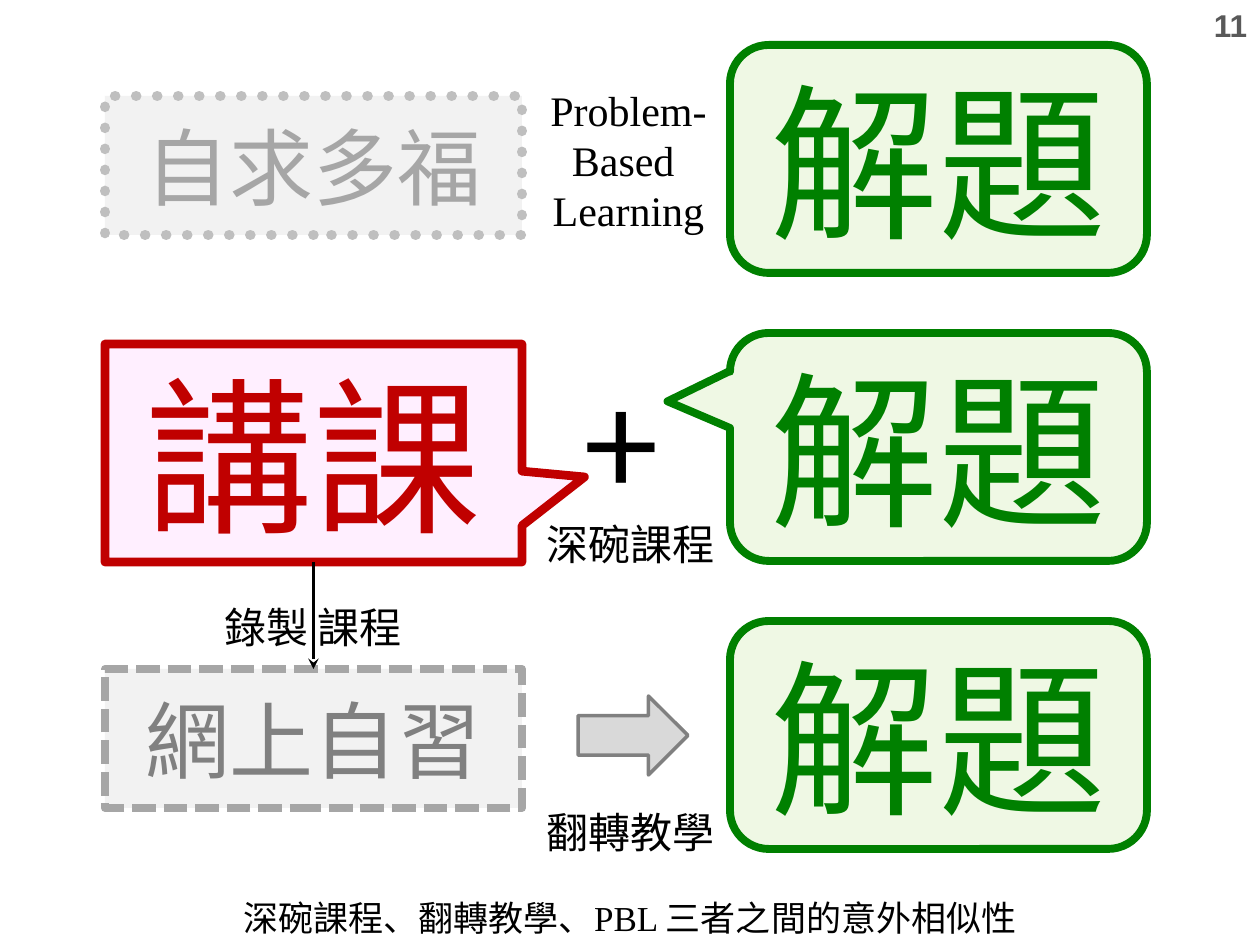
"""Builds the slide comparing three course formats built around problem solving."""
from dataclasses import dataclass
from typing import Optional

from lxml.etree import SubElement
from pptx import Presentation
from pptx.dml.color import RGBColor
from pptx.enum.dml import MSO_LINE_DASH_STYLE as Dash
from pptx.enum.shapes import MSO_CONNECTOR as Connector, MSO_SHAPE as Preset
from pptx.enum.text import MSO_ANCHOR as Anchor, MSO_AUTO_SIZE as AutoSize, PP_ALIGN as Align
from pptx.oxml.ns import qn
from pptx.util import Emu, Pt

PX_PER_INCH = 126
SLIDE_WIDTH, SLIDE_HEIGHT = 1260, 945

BLACK = RGBColor(0x00, 0x00, 0x00)
GREEN = RGBColor(0x00, 0x80, 0x00)
PALE_GREEN = RGBColor(0xEF, 0xF8, 0xE4)
RED = RGBColor(0xC0, 0x00, 0x00)
PALE_PINK = RGBColor(0xFF, 0xEF, 0xFF)
GRAY_95 = RGBColor(0xF2, 0xF2, 0xF2)
GRAY_85 = RGBColor(0xD9, 0xD9, 0xD9)
GRAY_75 = RGBColor(0xBF, 0xBF, 0xBF)
GRAY_65 = RGBColor(0xA6, 0xA6, 0xA6)
GRAY_50 = RGBColor(0x80, 0x80, 0x80)
GRAY_35 = RGBColor(0x59, 0x59, 0x59)

CJK_JP, CJK_SC = "Noto Sans CJK JP", "Noto Sans CJK SC"
SERIF, SANS = "Times New Roman", "Arial"

LEFT_COLUMN, RIGHT_COLUMN = 105, 730
FIRST_ROW, ROW_STEP = 45, 288
CARD_WIDTH, CARD_HEIGHT = 417, 228
STUDY_HEIGHT = 139


@dataclass(frozen=True)
class Box:
    left: int
    top: int
    width: int
    height: int

    def emu(self) -> tuple:
        return tuple(px(side) for side in (self.left, self.top, self.width, self.height))


@dataclass(frozen=True)
class TextStyle:
    size: int
    color: RGBColor = BLACK
    latin: str = CJK_SC
    east_asian: str = CJK_SC
    bold: bool = False
    align: Align = Align.CENTER


@dataclass(frozen=True)
class Card:
    box: Box
    preset: Preset
    fill: RGBColor
    line: RGBColor
    line_width: float
    text: str = ""
    style: Optional[TextStyle] = None
    dash: Optional[Dash] = None
    round_cap: bool = False
    adjustments: tuple = ()


@dataclass(frozen=True)
class Label:
    box: Box
    text: str
    style: TextStyle


def px(length: int) -> Emu:
    """Convert pixels to EMU."""
    return Emu(round(length * 914400 / PX_PER_INCH))


def write_text(frame, text: str, style: TextStyle) -> None:
    """Fill a text frame with one paragraph per line of text."""
    frame.text = text
    for paragraph in frame.paragraphs:
        paragraph.alignment = style.align
        font = paragraph.font
        font.size, font.bold, font.name = Pt(style.size), style.bold, style.latin
        font.color.rgb = style.color
        SubElement(font._element, qn("a:ea"), typeface=style.east_asian)


def add_card(slide, card: Card):
    """Draw a filled and outlined preset shape with optional text."""
    shape = slide.shapes.add_shape(card.preset, *card.box.emu())
    shape.shadow.inherit = False
    shape.fill.solid()
    shape.fill.fore_color.rgb = card.fill
    shape.line.color.rgb = card.line
    shape.line.width = Pt(card.line_width)
    if card.dash:
        shape.line.dash_style = card.dash
    if card.round_cap:
        shape.line._get_or_add_ln().set("cap", "rnd")
    for index, value in enumerate(card.adjustments):
        shape.adjustments[index] = value
    if card.style:
        shape.text_frame.vertical_anchor = Anchor.MIDDLE
        write_text(shape.text_frame, card.text, card.style)
    return shape


def add_label(slide, label: Label) -> None:
    """Draw an unwrapped text box."""
    frame = slide.shapes.add_textbox(*label.box.emu()).text_frame
    frame.word_wrap = False
    write_text(frame, label.text, label.style)


def add_arrow(slide, source, target) -> None:
    """Join the bottom of one shape to the top of another."""
    arrow = slide.shapes.add_connector(Connector.STRAIGHT, 0, 0, 0, 0)
    arrow.begin_connect(source, 2)
    arrow.end_connect(target, 0)
    arrow.line.color.rgb = BLACK
    arrow.line.width = Pt(2)
    SubElement(arrow.line._get_or_add_ln(), qn("a:tailEnd"), type="stealth")
    SubElement(arrow._element.spPr, qn("a:effectLst"))


def set_title(slide, text: str, box: Box, style: TextStyle) -> None:
    """Place and format the title placeholder."""
    title = slide.shapes.title
    title.left, title.top, title.width, title.height = box.emu()
    title.text_frame.auto_size = AutoSize.NONE
    write_text(title.text_frame, text, style)


def solving_card(row: int, tip: tuple) -> Card:
    """Describe the problem-solving callout of a row."""
    box = Box(RIGHT_COLUMN, FIRST_ROW + row * ROW_STEP, CARD_WIDTH, CARD_HEIGHT)
    return Card(box, Preset.ROUNDED_RECTANGULAR_CALLOUT, PALE_GREEN, GREEN, 4.5, "解題",
                TextStyle(96, GREEN, CJK_JP, CJK_JP), adjustments=(*tip, 0.17))


def study_card(top: int, text: str, color: RGBColor, line: RGBColor, width: float,
               dash: Dash, round_cap: bool = False) -> Card:
    """Describe a self-study box in the left column."""
    return Card(Box(LEFT_COLUMN, top, CARD_WIDTH, STUDY_HEIGHT), Preset.RECTANGLE, GRAY_95,
                line, width, text, TextStyle(48, color, CJK_JP, CJK_JP), dash, round_cap)


HIDDEN_TIP, LEFT_TIP = (-0.5, -0.19), (-0.65, -0.2)
SOLVING_CARDS = [solving_card(row, tip)
                 for row, tip in enumerate((HIDDEN_TIP, LEFT_TIP, HIDDEN_TIP))]
SELF_RELIANCE = study_card(96, "自求多福", GRAY_65, GRAY_75, 6, Dash.ROUND_DOT, True)
ONLINE_STUDY = study_card(669, "網上自習", GRAY_50, GRAY_65, 4.5, Dash.SQUARE_DOT)
LECTURE = Card(Box(LEFT_COLUMN, 344, CARD_WIDTH, 218), Preset.RECTANGULAR_CALLOUT, PALE_PINK,
               RED, 5, "講課", TextStyle(96, RED, CJK_JP, CJK_JP), adjustments=(0.65, 0.11))
FLIP_ARROW = Card(Box(578, 696, 110, 79), Preset.RIGHT_ARROW, GRAY_85, GRAY_50, 2)

CAPTION = TextStyle(24, align=Align.LEFT)
LABELS = [
    Label(Box(570, 353, 112, 183), "+", TextStyle(80, align=Align.LEFT)),
    Label(Box(534, 512, 195, 63), "深碗課程", CAPTION),
    Label(Box(534, 512 + ROW_STEP, 195, 63), "翻轉教學", CAPTION),
    Label(Box(537, 78, 183, 165), "Problem-\nBased \nLearning", TextStyle(24, latin=SERIF)),
    Label(Box(206, 595, 214, 63), "錄製 課程", TextStyle(24)),
    Label(Box(1201, 0, 59, 50), "11", TextStyle(18, GRAY_35, SANS, bold=True)),
]


def main() -> None:
    """Build and save the slide."""
    deck = Presentation()
    deck.slide_width, deck.slide_height = px(SLIDE_WIDTH), px(SLIDE_HEIGHT)
    slide = deck.slides.add_slide(deck.slide_layouts[5])
    set_title(slide, "深碗課程、翻轉教學、PBL 三者之間的意外相似性",
              Box(0, 890, SLIDE_WIDTH, 55), TextStyle(20, latin=SERIF))
    for card in (*SOLVING_CARDS, SELF_RELIANCE, FLIP_ARROW):
        add_card(slide, card)
    add_arrow(slide, add_card(slide, LECTURE), add_card(slide, ONLINE_STUDY))
    for label in LABELS:
        add_label(slide, label)
    deck.save("out.pptx")


if __name__ == "__main__":
    main()
